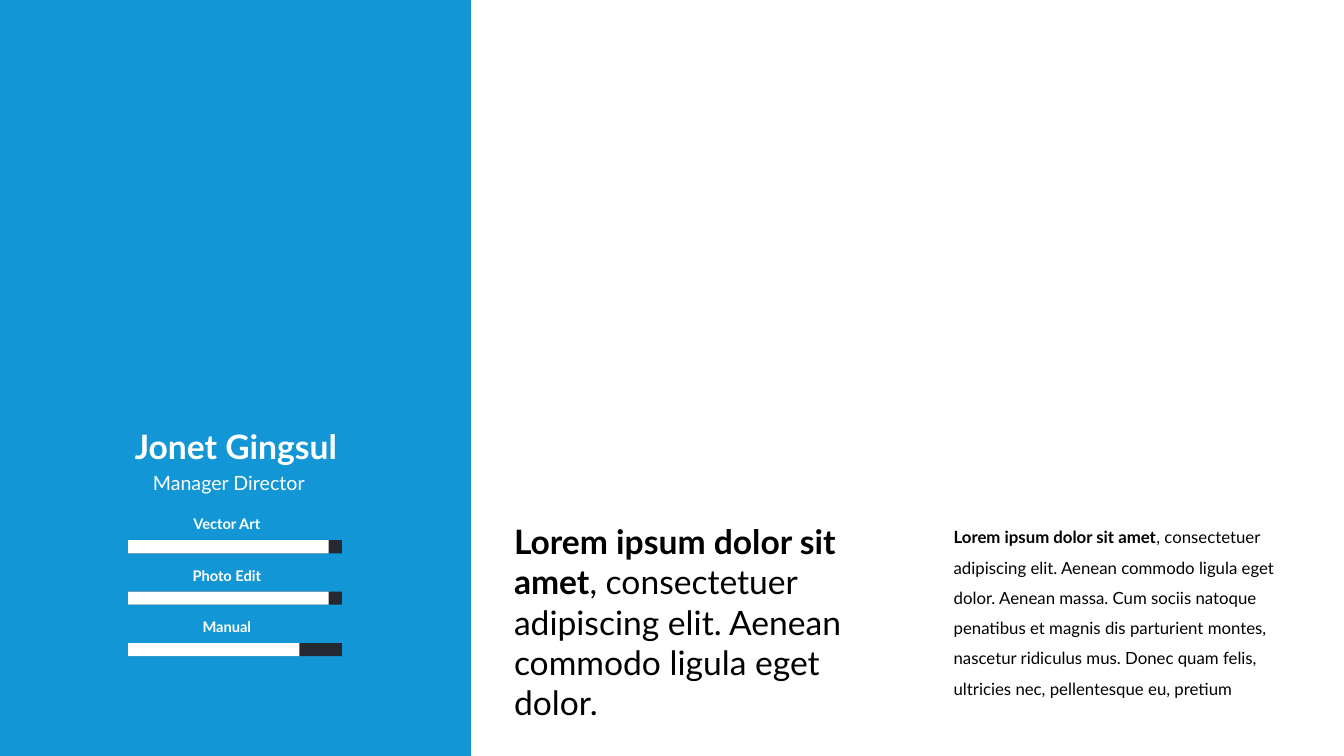
from pptx import Presentation
from pptx.dml.color import RGBColor
from pptx.enum.shapes import MSO_SHAPE
from pptx.enum.text import MSO_ANCHOR, MSO_AUTO_SIZE, PP_ALIGN
from pptx.util import Pt

PX = 9144
BLUE = RGBColor(0x12, 0x96, 0xD6)
DARK = RGBColor(0x25, 0x27, 0x31)
WHITE = RGBColor(0xFF, 0xFF, 0xFF)
BLACK = RGBColor(0, 0, 0)


def add_rect(x, y, w, h, color):
    sp = s.shapes.add_shape(MSO_SHAPE.RECTANGLE, x * PX, y * PX, w * PX, h * PX)
    sp.shadow.inherit = False
    sp.fill.solid()
    sp.fill.fore_color.rgb = color
    sp.line.fill.background()
    return sp


def add_text(x, y, w, h, bold="", plain="", size=12, color=BLACK,
             align=PP_ALIGN.LEFT, wrap=True, spacing=1.0, sp=None):
    sp = sp or s.shapes.add_textbox(0, 0, 0, 0)
    sp.left, sp.top, sp.width, sp.height = x * PX, y * PX, w * PX, h * PX
    tf = sp.text_frame
    tf.word_wrap = wrap
    tf.auto_size = MSO_AUTO_SIZE.SHAPE_TO_FIT_TEXT
    tf.vertical_anchor = MSO_ANCHOR.TOP
    p = tf.paragraphs[0]
    p.alignment = align
    p.line_spacing = spacing
    for text, is_bold in ((bold, True), (plain, False)):
        if text:
            r = p.add_run()
            r.text = text
            r.font.name = "Lato"
            r.font.size = Pt(size)
            r.font.bold = is_bold
            r.font.color.rgb = color


prs = Presentation()
prs.slide_width = 1333 * PX
prs.slide_height = 750 * PX
s = prs.slides.add_slide(prs.slide_layouts[5])

panel = add_rect(0, 0, 467, 750, BLUE)
title = s.shapes.title
panel.element.addnext(title.element)
add_text(122, 418, 224, 50, bold="Jonet Gingsul", size=24, color=WHITE,
         align=PP_ALIGN.CENTER, wrap=False, sp=title)
add_text(140, 462, 174, 34, plain="Manager Director", size=14, color=WHITE,
         align=PP_ALIGN.CENTER, wrap=False)

skills = [("Vector Art", 199), ("Photo Edit", 199), ("Manual", 170)]
for i, (skill, level) in enumerate(skills):
    y = 506 + 51 * i
    add_text(151, y, 148, 28, bold=skill, size=10.5, color=WHITE,
             align=PP_ALIGN.CENTER)
    add_rect(127, y + 30, 212, 13, DARK)
    add_rect(127, y + 30, level, 13, WHITE)

add_text(500, 512, 366, 212, bold="Lorem ipsum dolor sit amet",
         plain=", consectetuer adipiscing elit. Aenean commodo ligula eget dolor.",
         size=24)
add_text(936, 508, 361, 188, bold="Lorem ipsum dolor sit amet",
         plain=", consectetuer adipiscing elit. Aenean commodo ligula eget dolor. "
               "Aenean massa. Cum sociis natoque penatibus et magnis dis parturient "
               "montes, nascetur ridiculus mus. Donec quam felis, ultricies nec, "
               "pellentesque eu, pretium",
         spacing=1.5)

prs.save("out.pptx")
